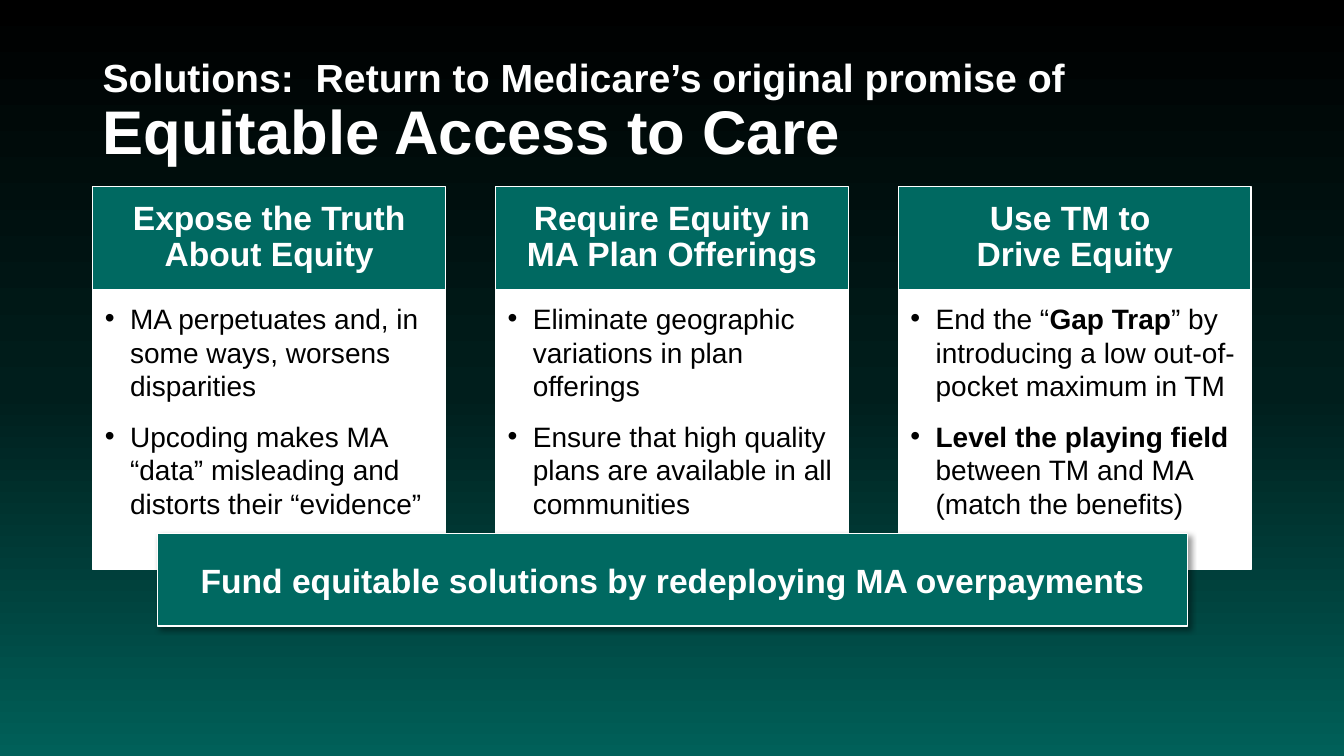
from copy import deepcopy

from lxml import etree
from pptx import Presentation
from pptx.dml.color import RGBColor
from pptx.enum.shapes import MSO_SHAPE
from pptx.enum.text import MSO_ANCHOR, PP_ALIGN
from pptx.oxml import parse_xml
from pptx.oxml.ns import nsdecls, qn
from pptx.util import Inches, Pt

RECTANGLE = MSO_SHAPE.RECTANGLE
TOP, MIDDLE = MSO_ANCHOR.TOP, MSO_ANCHOR.MIDDLE
LEFT, CENTER = PP_ALIGN.LEFT, PP_ALIGN.CENTER

COLORS = {"black": "000000", "dark": "001E1C", "deep": "006059",
          "teal": "006961", "white": "FFFFFF"}
DEFAULT_INSETS = (0.1, 0.05, 0.1, 0.05)
HEADER_INSETS = (0.21, 0.12, 0.21, 0.12)
BODY_INSETS = (0.12, 0.12, 0.13, 0.17)

COLUMN_LEFT, COLUMN_STEP, COLUMN_WIDTH = 0.92, 3.995, 3.5
HEADER_TOP, HEADER_HEIGHT, BODY_HEIGHT = 1.85, 1.02, 2.78

COLUMNS = [
    (["Expose the Truth About Equity"],
     [[("MA perpetuates and, in some ways, worsens disparities", False)],
      [("Upcoding makes MA “data” misleading and distorts their “evidence”", False)]]),
    (["Require Equity in MA Plan Offerings"],
     [[("Eliminate geographic variations in plan offerings", False)],
      [("Ensure that high quality plans are available in all communities", False)]]),
    (["Use TM to ", "Drive Equity"],
     [[("End the “", False), ("Gap Trap", True),
       ("” by introducing a low out-of-pocket maximum in TM", False)],
      [("Level the playing field ", True),
       ("between TM and MA (match the benefits)", False)]]),
]


def color(name):
    return RGBColor.from_string(COLORS[name])


class SlideBuilder:
    font = "Arial"

    def __init__(self, deck):
        self.page = deck.slides.add_slide(deck.slide_layouts[6])

    def background(self, stops):
        fill = self.page.background.fill
        fill.gradient()
        fill.gradient_angle = 270
        stop_list = next(self.page.background._cSld.iter(qn("a:gsLst")))
        stop_list.append(deepcopy(stop_list[0]))
        for stop, (position, name) in zip(fill.gradient_stops, stops):
            stop.position = position
            stop.color.rgb = color(name)

    def frame(self, box, anchor, insets):
        frame = box.text_frame
        sides = ("margin_left", "margin_top", "margin_right", "margin_bottom")
        settings = dict(zip(sides, map(Inches, insets)),
                        word_wrap=True, vertical_anchor=anchor)
        for name, value in settings.items():
            setattr(frame, name, value)
        return frame

    def panel(self, left, top, width, height, fill, anchor=MIDDLE, insets=DEFAULT_INSETS):
        box = self.page.shapes.add_shape(
            RECTANGLE, Inches(left), Inches(top), Inches(width), Inches(height))
        box.shadow.inherit = False
        box.fill.solid()
        box.fill.fore_color.rgb = color(fill)
        box.line.color.rgb = color("white")
        box.line.width = Pt(1)
        return box, self.frame(box, anchor, insets)

    def paragraph(self, frame, first, **formats):
        para = frame.paragraphs[0] if first else frame.add_paragraph()
        for name, value in formats.items():
            setattr(para, name, value)
        return para

    def span(self, para, text, size, ink="white", bold=True):
        span = para.add_run()
        span.text = text
        for name, value in {"name": self.font, "size": Pt(size), "bold": bold}.items():
            setattr(span.font, name, value)
        span.font.color.rgb = color(ink)

    def title(self, lead, headline):
        box = self.page.shapes.add_textbox(
            Inches(0.92), Inches(0.4), Inches(11.5), Inches(1.45))
        frame = self.frame(box, MIDDLE, DEFAULT_INSETS)
        para = self.paragraph(frame, True, line_spacing=0.9)
        self.span(para, lead, 28)
        para.add_line_break()
        self.span(para, headline, 44)

    def header(self, left, lines):
        _, frame = self.panel(left, HEADER_TOP, COLUMN_WIDTH, HEADER_HEIGHT,
                              "teal", insets=HEADER_INSETS)
        for index, line in enumerate(lines):
            para = self.paragraph(frame, index == 0, alignment=CENTER, line_spacing=0.9)
            self.span(para, line, 24)

    def bullets(self, left, items):
        _, frame = self.panel(left, HEADER_TOP + HEADER_HEIGHT, COLUMN_WIDTH,
                              BODY_HEIGHT, "white", TOP, BODY_INSETS)
        for index, item in enumerate(items):
            para = self.paragraph(frame, index == 0, level=1,
                                  alignment=LEFT, space_after=Pt(12))
            properties = para._p.get_or_add_pPr()
            properties.set("marL", str(Inches(0.25)))
            properties.set("indent", str(-Inches(0.25)))
            etree.SubElement(properties, qn("a:buFont")).set("typeface", self.font)
            etree.SubElement(properties, qn("a:buChar")).set("char", "•")
            for text, bold in item:
                self.span(para, text, 20, "black", bold)

    def banner(self, text):
        box, frame = self.panel(1.56, 5.29, 10.22, 0.92, "teal")
        effects = box._element.spPr.find(qn("a:effectLst"))
        effects.append(parse_xml(
            f'<a:outerShdw {nsdecls("a")} blurRad="{Pt(4)}" dist="{Pt(3)}" '
            f'dir="2700000" algn="tl" rotWithShape="0">'
            f'<a:srgbClr val="{COLORS["black"]}"><a:alpha val="40000"/></a:srgbClr>'
            '</a:outerShdw>'))
        self.span(self.paragraph(frame, True, alignment=CENTER), text, 24)


def main():
    deck = Presentation()
    deck.slide_width, deck.slide_height = Inches(13.33), Inches(7.5)
    slide = SlideBuilder(deck)
    slide.background([(0, "black"), (0.52, "dark"), (1, "deep")])
    slide.title("Solutions:  Return to Medicare’s original promise of",
                "Equitable Access to Care")
    for index, (heading, items) in enumerate(COLUMNS):
        left = COLUMN_LEFT + index * COLUMN_STEP
        slide.header(left, heading)
        slide.bullets(left, items)
    slide.banner("Fund equitable solutions by redeploying MA overpayments")
    deck.save("out.pptx")


if __name__ == "__main__":
    main()
